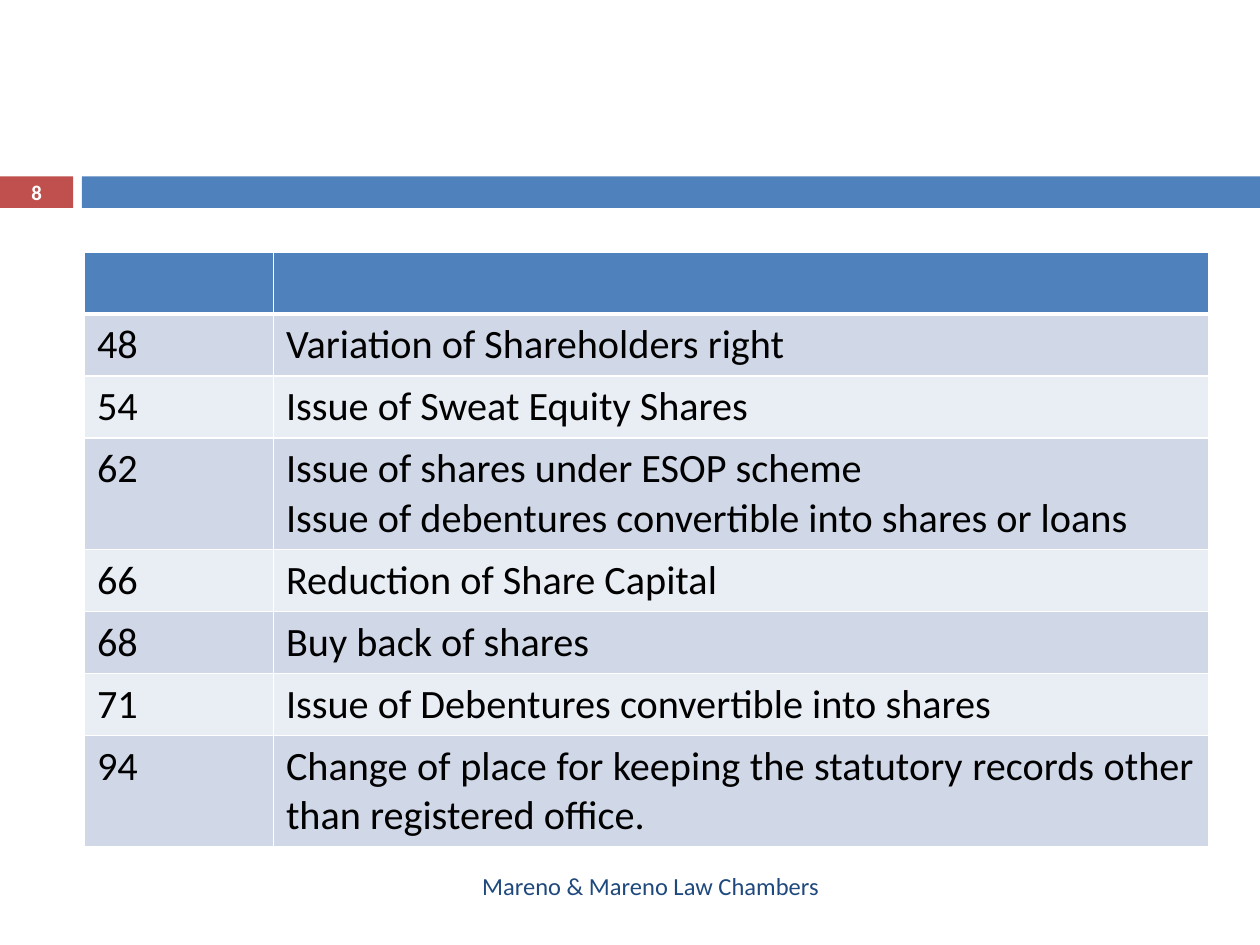
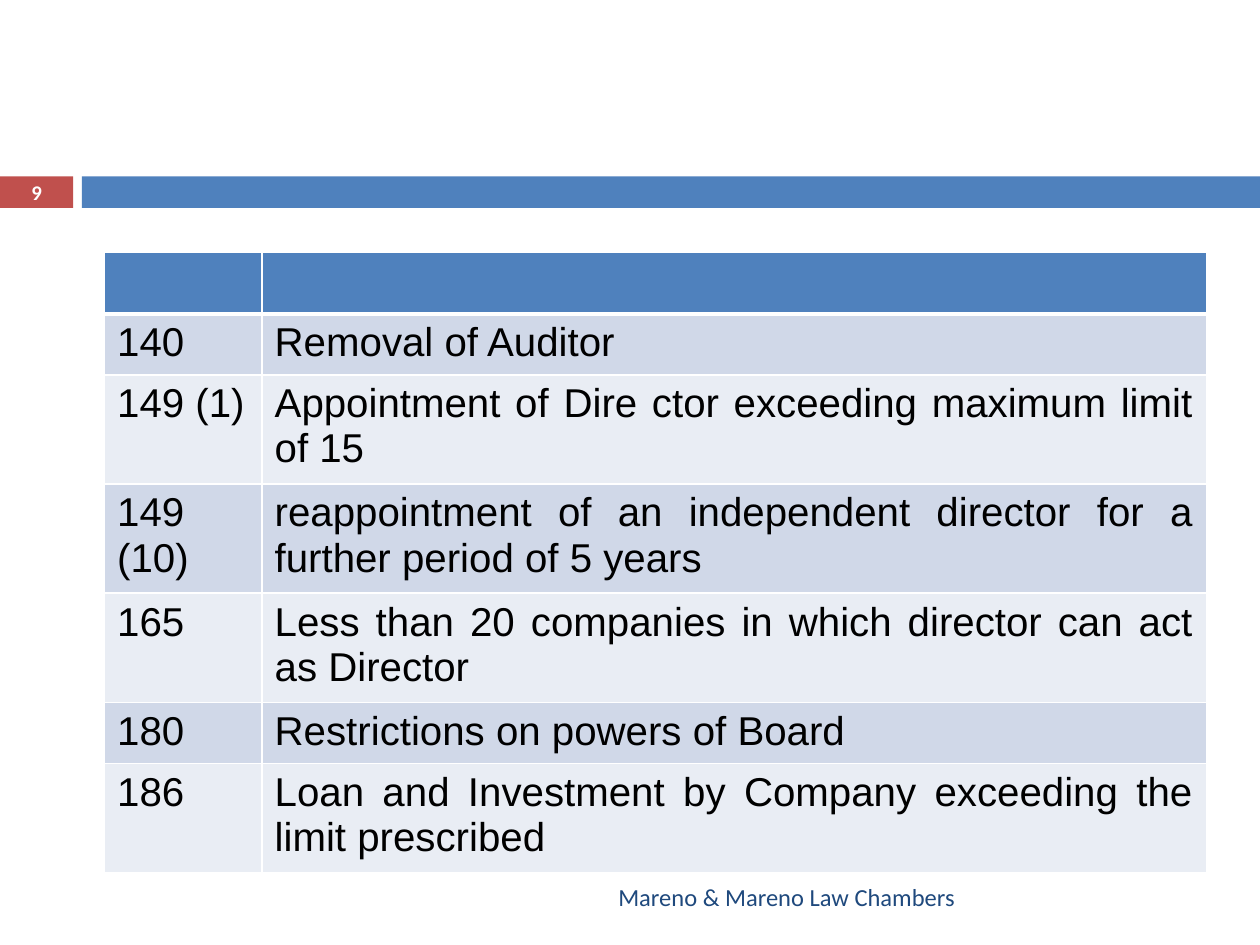
from collections import namedtuple

from lxml import etree
from pptx import Presentation
from pptx import util as u
from pptx.dml import color
from pptx.enum import shapes, text
from pptx.oxml import ns

COLOURS = {
    "accent": "C0504D",
    "band": "4F81BD",
    "odd": "D0D8E8",
    "even": "E9EDF4",
    "ink": "000000",
    "footer": "1F497D",
    "white": "FFFFFF",
}
Box = namedtuple("Box", "left top width height")

NUMBER_BOX = Box(0, 100.8, 41.76, 18)
BAND_BOX = Box(46.8, 100.8, 673.2, 18)
FOOTER_TEXT = "Mareno & Mareno Law Chambers"
FOOTER_STYLE = {"size": u.Pt(14), "name": "Calibri"}
NUMBER_STYLE = {"size": u.Pt(11.9), "name": "Calibri", "bold": True}
HEADER_HEIGHT = 35.43

SECTION_PAGES = [
    {
        "number": "8",
        "font": "Calibri",
        "table_box": Box(48.24, 144, 642.24, 339.43),
        "number_width": 108,
        "line_heights": {1: 35.43, 2: 63.43},
        "footer_box": Box(48.24, 491.76, 426.96, 28.8),
        "sections": [
            ("48", "Variation of Shareholders right", 1),
            ("54", "Issue of Sweat Equity Shares", 1),
            ("62", "Issue of shares under ESOP scheme\n"
                   "Issue of debentures convertible into shares or loans", 2),
            ("66", "Reduction of Share Capital", 1),
            ("68", "Buy back of shares", 1),
            ("71", "Issue of Debentures convertible into shares", 1),
            ("94", "Change of place for keeping the statutory records "
                   "other than registered office.", 2),
        ],
    },
    {
        "number": "9",
        "font": "Arial",
        "table_box": Box(59.76, 144, 630, 336.9),
        "number_width": 90,
        "line_heights": {1: 33.1, 2: 58.9},
        "footer_box": Box(126, 498.24, 426.96, 28.8),
        "sections": [
            ("140", "Removal of Auditor", 1),
            ("149 (1)", "Appointment of Dire ctor exceeding maximum limit of 15", 2),
            ("149 (10)", "reappointment of an independent director for a "
                         "further period of 5 years", 2),
            ("165", "Less than 20 companies in which director can act as Director", 2),
            ("180", "Restrictions on powers of Board", 1),
            ("186", "Loan and Investment by Company exceeding the limit prescribed", 2),
        ],
    },
]


def rgb(name):
    """Return the named colour."""
    return color.RGBColor.from_string(COLOURS[name])


def points(box):
    """Convert the sides of a box to lengths."""
    return [u.Pt(side) for side in box]


def style_frame(frame, style, ink, alignment):
    """Format every paragraph and span of a text frame."""
    for para in frame.paragraphs:
        para.alignment = alignment
        for span in para.runs:
            for key, value in style.items():
                setattr(span.font, key, value)
            span.font.color.rgb = rgb(ink)


def add_bar(page, box, fill):
    """Draw a plain coloured bar."""
    bar = page.shapes.add_shape(shapes.MSO_SHAPE.RECTANGLE, *points(box))
    bar.shadow.inherit = False
    bar.fill.solid()
    bar.fill.fore_color.rgb = rgb(fill)
    bar.line.fill.background()


def add_label(page, box, words, style, ink, alignment):
    """Place one line of text, centred vertically in its box."""
    frame = page.shapes.add_textbox(*points(box)).text_frame
    frame.word_wrap = True
    frame.vertical_anchor = text.MSO_ANCHOR.MIDDLE
    frame.text = words
    style_frame(frame, style, ink, alignment)


def add_borders(cell, widths):
    """Give a cell white borders of the given widths."""
    properties = cell._tc.get_or_add_tcPr()
    for side, width in widths.items():
        line = etree.SubElement(properties, ns.qn(f"a:ln{side}"), w=str(u.Pt(width)))
        fill = etree.SubElement(line, ns.qn("a:solidFill"))
        etree.SubElement(fill, ns.qn("a:srgbClr"), val=COLOURS["white"])


def add_section_table(page, box, number_width, font, line_heights, sections):
    """Build the banded table of section numbers and subjects."""
    rows = [("", "")] + [section[:2] for section in sections]
    heights = [HEADER_HEIGHT] + [line_heights[section[2]] for section in sections]
    table = page.shapes.add_table(len(rows), 2, *points(box)).table
    for column, width in zip(table.columns, (number_width, box.width - number_width)):
        column.width = u.Pt(width)
    for index, (words, height) in enumerate(zip(rows, heights)):
        table.rows[index].height = u.Pt(height)
        fill = ("even", "odd")[index % 2] if index else "band"
        widths = {"L": 1, "R": 1, "T": 3 if index == 1 else 1, "B": 1 if index else 3}
        for cell, content in zip(table.rows[index].cells, words):
            add_borders(cell, widths)
            cell.fill.solid()
            cell.fill.fore_color.rgb = rgb(fill)
            cell.text = content
            style_frame(cell.text_frame, {"size": u.Pt(23), "name": font},
                        "ink", text.PP_ALIGN.JUSTIFY)


def add_section_page(deck, number, footer_box, table_box, **table_values):
    """Add a page with bands, section table, footer and page number."""
    page = deck.slides.add_slide(deck.slide_layouts[6])
    add_bar(page, NUMBER_BOX, "accent")
    add_bar(page, BAND_BOX, "band")
    add_section_table(page, table_box, **table_values)
    add_label(page, footer_box, FOOTER_TEXT, FOOTER_STYLE, "footer", text.PP_ALIGN.RIGHT)
    add_label(page, NUMBER_BOX, number, NUMBER_STYLE, "white", text.PP_ALIGN.CENTER)


def main():
    """Build and save the deck."""
    deck = Presentation()
    deck.slide_width, deck.slide_height = u.Pt(720), u.Pt(540)
    for values in SECTION_PAGES:
        add_section_page(deck, **values)
    deck.save("out.pptx")


if __name__ == "__main__":
    main()
